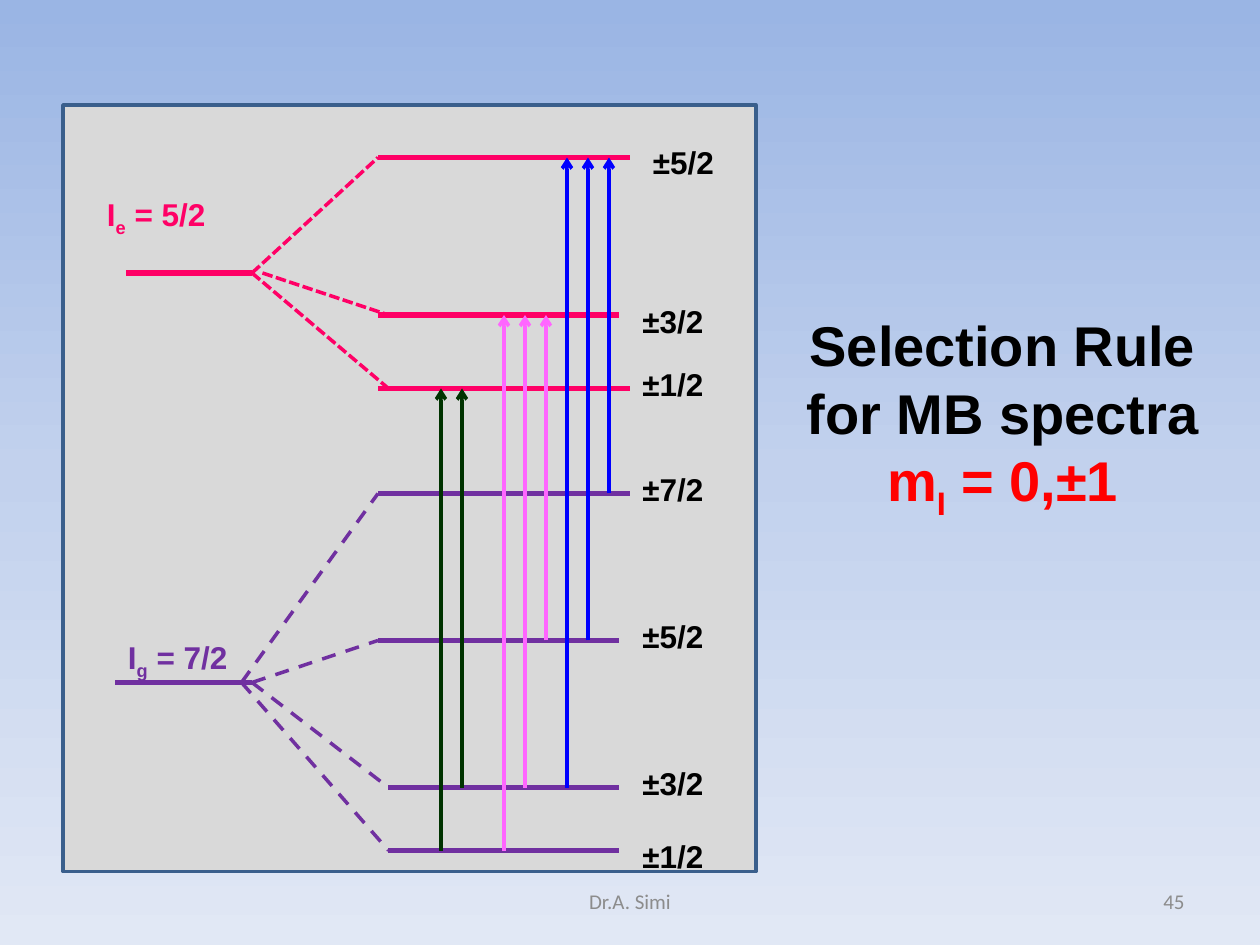
from copy import deepcopy

from lxml import etree
from pptx import Presentation
from pptx.dml.color import RGBColor
from pptx.enum import dml, shapes, text
from pptx.oxml.ns import qn
from pptx.util import Pt

PINK, PURPLE, BLACK, RED, GRAY = "FF0066", "7030A0", "000000", "FF0000", "8C8C8C"
BLUE, ROSE, GREEN = "0000FF", "FF66FF", "003300"
LEFT, MID, RIGHT = text.PP_ALIGN.LEFT, text.PP_ALIGN.CENTER, text.PP_ALIGN.RIGHT


def color(code):
    return RGBColor.from_string(code)


class Board:
    """Holds the text style and the current slide."""

    font = "Arial"

    def __init__(self, slide):
        self.slide = slide

    def ground(self, stops):
        fill = self.slide.background.fill
        fill.gradient()
        fill.gradient_angle = 270
        first = self.slide._element.find(".//" + qn("a:gs"))
        first.addnext(deepcopy(first))
        for stop, (place, code) in zip(fill.gradient_stops, stops):
            stop.position = place
            stop.color.rgb = color(code)

    def panel(self, x, y, w, h, fill, edge):
        box = self.slide.shapes.add_shape(
            shapes.MSO_SHAPE.RECTANGLE, Pt(x), Pt(y), Pt(w), Pt(h))
        box.shadow.inherit = False
        box.fill.solid()
        box.fill.fore_color.rgb = color(fill)
        box.line.color.rgb = color(edge)
        box.line.width = Pt(2)

    def line(self, x1, y1, x2, y2, code, width=2, dash=None, arrow=False):
        wire = self.slide.shapes.add_connector(
            shapes.MSO_CONNECTOR.STRAIGHT, Pt(x1), Pt(y1), Pt(x2), Pt(y2))
        wire.line.color.rgb = color(code)
        wire.line.width = Pt(width)
        if dash:
            wire.line.dash_style = dash
        if arrow:
            etree.SubElement(wire.line._get_or_add_ln(), qn("a:tailEnd"), type="arrow")
        etree.SubElement(wire._element.spPr, qn("a:effectLst"))

    def words(self, frame, parts, size, align, bold, font):
        """Each part is (words, colour) or (words, colour, True) for a subscript."""
        frame.word_wrap = True
        para = frame.paragraphs[0]
        para.alignment = align
        for part, code, *sub in parts:
            run = para.add_run()
            run.text = part
            run.font.name = font
            run.font.size = Pt(size)
            run.font.bold = bold
            run.font.color.rgb = color(code)
            if sub:
                run._r.get_or_add_rPr().set("baseline", "-25000")

    def label(self, x, y, w, parts, size=18, align=LEFT, bold=True, font=font,
              anchor=text.MSO_ANCHOR.TOP):
        box = self.slide.shapes.add_textbox(Pt(x), Pt(y), Pt(w), Pt(29))
        box.text_frame.vertical_anchor = anchor
        self.words(box.text_frame, parts, size, align, bold, font)

    def title(self, x, y, w, h, parts, size):
        head = self.slide.shapes.title
        head.left, head.top, head.width, head.height = Pt(x), Pt(y), Pt(w), Pt(h)
        head.text_frame.auto_size = text.MSO_AUTO_SIZE.NONE
        head.text_frame.vertical_anchor = text.MSO_ANCHOR.TOP
        self.words(head.text_frame, parts, size, MID, True, self.font)

    def foot(self, x, w, words, align):
        self.label(x, 500.5, w, [(words, GRAY)], 12, align, False, "Calibri",
                   text.MSO_ANCHOR.MIDDLE)


def main():
    deck = Presentation()
    deck.slide_width, deck.slide_height = Pt(720), Pt(540)
    board = Board(deck.slides.add_slide(deck.slide_layouts[5]))

    # Ground, title and panel
    board.ground([(0, "9AB5E4"), (0.5, "C2D1ED"), (1, "E1E8F5")])
    board.title(450, 174, 246, 124, [
        ("Selection Rule for MB spectra ", BLACK), ("m", RED),
        ("I", RED, True), (" = 0,±1", RED)], 32)
    board.panel(36, 60, 396, 438, "D9D9D9", "3A5F8C")

    # Unsplit levels: left end, height, colour
    for x, y, code in [(66, 390, PURPLE), (72, 156, PINK)]:
        board.line(x, y, 144, y, code, 3)

    # Split levels: left end, right end, height, colour, label, label place
    levels = [
        (216, 360, 90, PINK, "±5/2", 366, 78),
        (216, 354, 180, PINK, "±3/2", 360, 169),
        (216, 360, 222, PINK, "±1/2", 360, 205),
        (216, 360, 282, PURPLE, "±7/2", 360, 265),
        (216, 354, 366, PURPLE, "±5/2", 360, 349),
        (222, 354, 450, PURPLE, "±3/2", 360, 433),
        (222, 354, 486, PURPLE, "±1/2", 360, 475),
    ]
    for x1, x2, y, code, *_ in levels:
        board.line(x1, y, x2, y, code, 3)

    # Allowed jumps: right-hand place, start heights, end height, colour
    for x, starts, end, code in [(348, (282, 366, 450), 90, BLUE),
                                 (312, (366, 450, 486), 180, ROSE),
                                 (264, (450, 486), 222, GREEN)]:
        for i, start in enumerate(starts):
            board.line(x - 12 * i, start, x - 12 * i, end, code, arrow=True)

    # Level labels
    for *_, words, x, y in levels:
        board.label(x, y, 54, [(words, BLACK)])

    # Dashed splits: start height, colour, dash, then (start, end x, end y)
    style = dml.MSO_LINE
    for y, code, dash, ends in [
        (156, PINK, style.SQUARE_DOT,
         [(144, 216, 90), (150, 222, 180), (144, 222, 222)]),
        (390, PURPLE, style.DASH,
         [(138, 216, 282), (144, 216, 366), (144, 222, 450), (138, 222, 486)]),
    ]:
        for x1, x2, y2 in ends:
            board.line(x1, y, x2, y2, code, dash=dash)

    # Spin labels
    for x, y, sub, spin, code in [(54, 108, "e", "5/2", PINK),
                                  (66, 361, "g", "7/2", PURPLE)]:
        board.label(x, y, 90, [("I", code), (sub, code, True), (f" = {spin}", code)])

    # Footer
    board.foot(516, 168, "45", RIGHT)
    board.foot(246, 228, "Dr.A. Simi", MID)

    deck.save("out.pptx")


if __name__ == "__main__":
    main()
